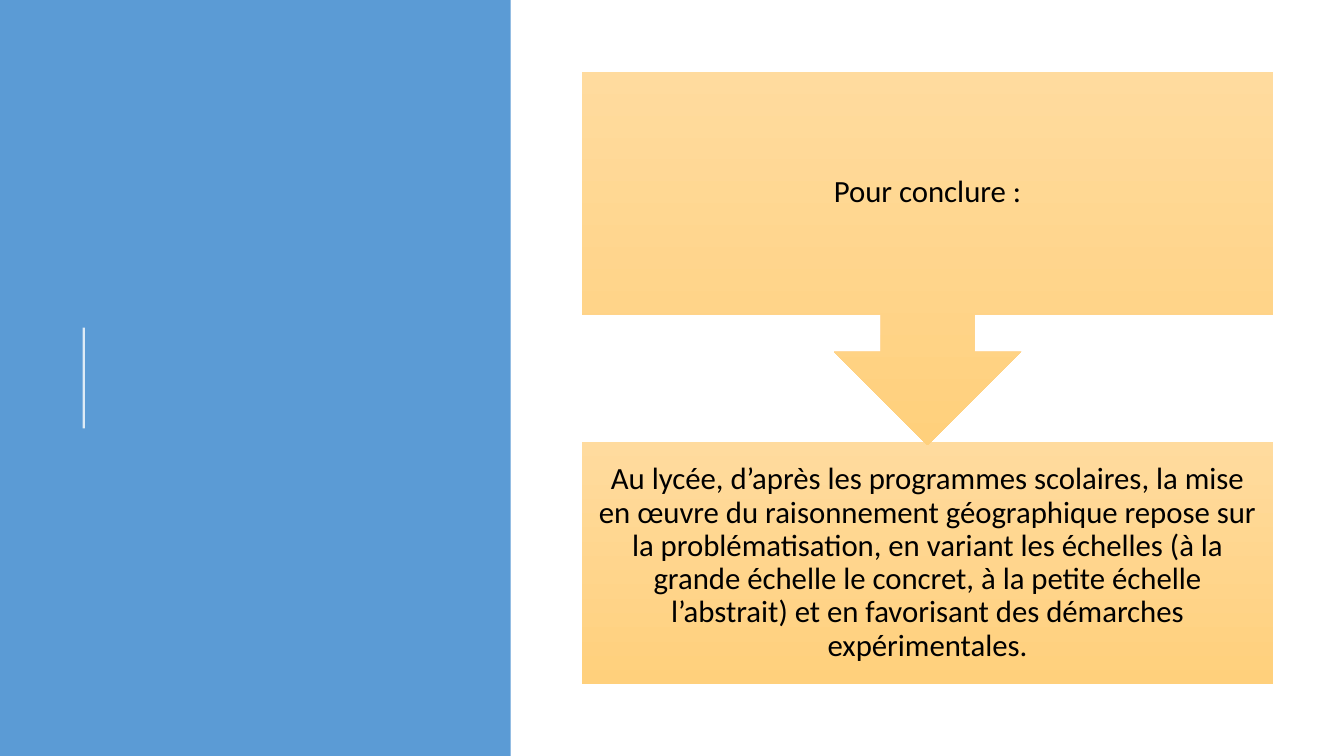
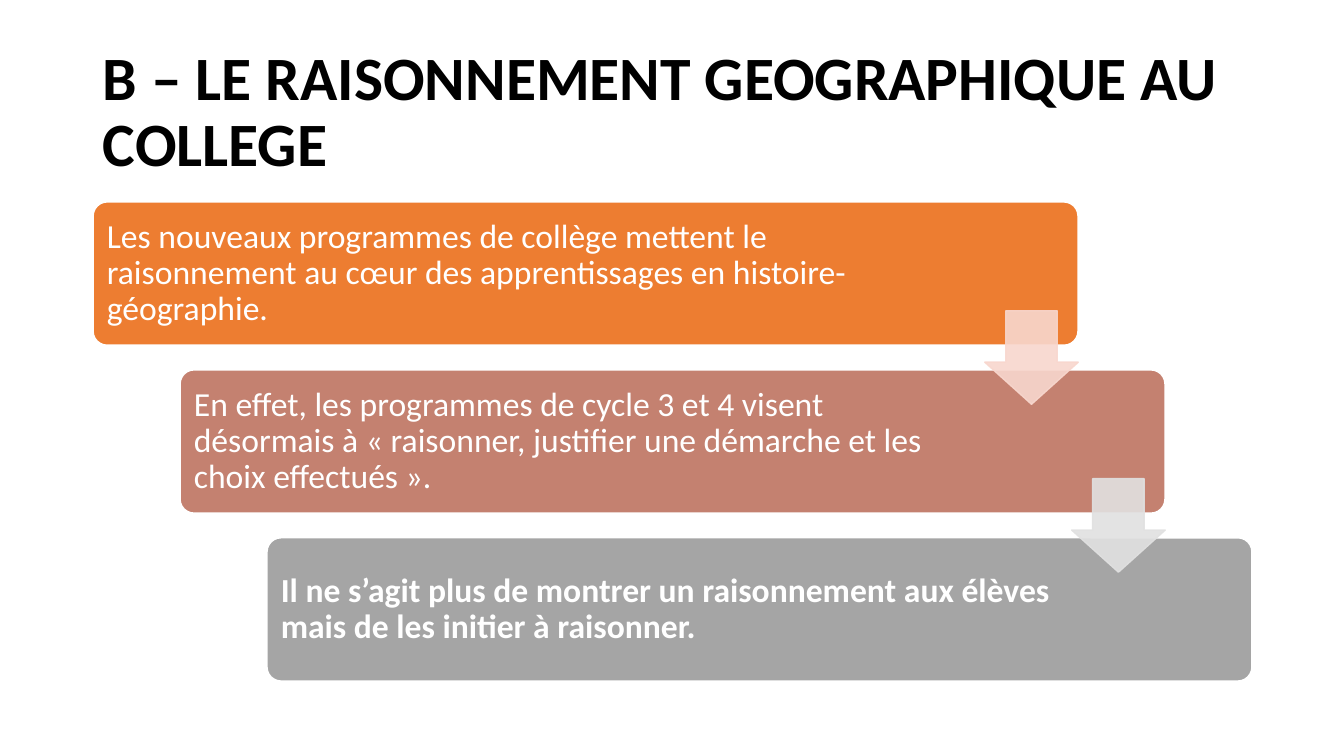
from lxml import etree
from pptx import Presentation
from pptx.dml.color import RGBColor
from pptx.enum.shapes import MSO_CONNECTOR, MSO_SHAPE
from pptx.enum.text import MSO_ANCHOR, MSO_AUTO_SIZE, PP_ALIGN
from pptx.oxml.ns import qn
from pptx.util import Inches, Pt

RECTANGLE = MSO_SHAPE.RECTANGLE
ROUNDED = MSO_SHAPE.ROUNDED_RECTANGLE
DOWN_ARROW = MSO_SHAPE.DOWN_ARROW
DOWN_CALLOUT = MSO_SHAPE.DOWN_ARROW_CALLOUT
STRAIGHT = MSO_CONNECTOR.STRAIGHT
MIDDLE = MSO_ANCHOR.MIDDLE
LEFT, CENTER = PP_ALIGN.LEFT, PP_ALIGN.CENTER
NO_AUTOFIT = MSO_AUTO_SIZE.NONE

WIDTH, HEIGHT = 13.33, 7.5
FONT = "Calibri"
TITLE_ONLY, BLANK = 5, 6
COLORS = {
    "black": "000000",
    "white": "FFFFFF",
    "blue": "5B9BD5",
    "gold_light": "FFDB9E",
    "gold_dark": "FFD07C",
    "orange": "ED7D31",
    "terracotta": "C48170",
    "gray": "A5A5A5",
    "pale_orange": "F8D7CE",
    "pale_gray": "E1E1E1",
}
CONCLUSION = (
    "Pour conclure :",
    "Au lycée, d’après les programmes scolaires, la mise en œuvre du raisonnement "
    "géographique repose sur la problématisation, en variant les échelles (à la grande "
    "échelle le concret, à la petite échelle l’abstrait) et en favorisant des démarches "
    "expérimentales.",
)
COLLEGE_TITLE = "B – LE RAISONNEMENT GEOGRAPHIQUE AU COLLEGE"
COLLEGE_STEPS = (
    ("Les nouveaux programmes de collège mettent le raisonnement au cœur des "
     "apprentissages en histoire-géographie.", "orange", False),
    ("En effet, les programmes de cycle 3 et 4 visent désormais à « raisonner, justifier "
     "une démarche et les choix effectués ».", "terracotta", False),
    ("Il ne s’agit plus de montrer un raisonnement aux élèves mais de les initier à "
     "raisonner.", "gray", True),
)
ARROW_COLORS = ("pale_orange", "pale_gray")


def rgb(name):
    """Return the named palette colour."""
    return RGBColor.from_string(COLORS[name])


def set_opacity(shape, percent):
    """Apply one opacity to the fill and line colours of a shape."""
    for color in shape.element.iter(qn("a:srgbClr")):
        etree.SubElement(color, qn("a:alpha")).set("val", str(percent * 1000))


def add_block(slide, kind, box, fill, line=None, line_width=1.5):
    """Add a flat preset shape; a pair of fill names gives a vertical gradient."""
    shape = slide.shapes.add_shape(kind, *map(Inches, box))
    shape.shadow.inherit = False
    if isinstance(fill, tuple):
        shape.fill.gradient()
        shape.fill.gradient_angle = 270
        for stop, name in zip(shape.fill.gradient_stops, fill):
            stop.color.rgb = rgb(name)
    else:
        shape.fill.solid()
        shape.fill.fore_color.rgb = rgb(fill)
    if line:
        shape.line.color.rgb = rgb(line)
        shape.line.width = Pt(line_width)
    else:
        shape.line.fill.background()
    return shape


def write_text(shape, text, size, color, alignment=LEFT, bold=False, inset=0.1, right=None):
    """Write one vertically centred paragraph into a shape."""
    frame = shape.text_frame
    frame.word_wrap = True
    frame.auto_size = NO_AUTOFIT
    frame.vertical_anchor = MIDDLE
    frame.margin_left = frame.margin_top = frame.margin_bottom = Inches(inset)
    frame.margin_right = Inches(inset if right is None else right)
    paragraph = frame.paragraphs[0]
    paragraph.alignment = alignment
    paragraph.line_spacing = 0.9
    run = paragraph.add_run()
    run.text = text
    run.font.name = FONT
    run.font.size = Pt(size)
    run.font.bold = bold
    run.font.color.rgb = rgb(color)


def add_title(slide, text, box):
    """Place and format the title placeholder."""
    title = slide.shapes.title
    title.left, title.top, title.width, title.height = map(Inches, box)
    write_text(title, text, 44, "black", bold=True)


def add_side_panel(slide, box):
    """Draw the coloured panel with its short vertical rule."""
    left, top, width, height = box
    add_block(slide, RECTANGLE, box, "blue")
    x, middle, half = left + width * 0.164, top + height / 2, height / 15
    rule = slide.shapes.add_connector(
        STRAIGHT, *map(Inches, (x, middle + half, x, middle - half)))
    rule.line.color.rgb = rgb("white")
    rule.line.width = Pt(1.5)
    set_opacity(rule, 80)
    etree.SubElement(rule.element.spPr, qn("a:effectLst"))


def add_conclusion_flow(slide, box, texts):
    """Stack a callout whose arrow points at the box below it."""
    left, top, width, height = box
    callout_height, box_height = height * 0.61, height * 0.396
    parts = (
        (RECTANGLE, top + height - box_height, box_height, texts[1]),
        (DOWN_CALLOUT, top, callout_height, texts[0]),
    )
    for kind, y, part_height, text in parts:
        shape = add_block(slide, kind, (left, y, width, part_height),
                          ("gold_light", "gold_dark"))
        write_text(shape, text, 22, "black", CENTER, inset=0.17)


def add_staircase(slide, box, steps, arrow_colors):
    """Lay cards in descending steps, with an arrow across each gap."""
    left, top, width, height = box
    card_width, card_height = width * 0.85, height * 0.3
    step_x = (width - card_width) / (len(steps) - 1)
    step_y = (height - card_height) / (len(steps) - 1)
    arrow_size = card_height * 0.65
    for index, (text, color, bold) in enumerate(steps):
        card_box = (left + index * step_x, top + index * step_y, card_width, card_height)
        card = add_block(slide, ROUNDED, card_box, color, "white")
        card.adjustments[0] = 0.1
        write_text(card, text, 24, "white", bold=bold, right=1.9)
    for index, color in enumerate(arrow_colors):
        x = left + index * step_x + card_width - arrow_size
        y = top + index * step_y + (step_y + card_height - arrow_size) / 2
        arrow = add_block(slide, DOWN_ARROW, (x, y, arrow_size, arrow_size), color, color, 1)
        arrow.adjustments[0], arrow.adjustments[1] = 0.55, 0.45
        set_opacity(arrow, 90)


def build_conclusion(presentation):
    """Build the concluding slide."""
    slide = presentation.slides.add_slide(presentation.slide_layouts[BLANK])
    add_side_panel(slide, (0, 0, WIDTH * 0.38, HEIGHT))
    add_conclusion_flow(slide, (5.77, 0.71, 6.86, 6.08), CONCLUSION)


def build_college(presentation):
    """Build the titled slide with the three steps."""
    slide = presentation.slides.add_slide(presentation.slide_layouts[TITLE_ONLY])
    add_title(slide, COLLEGE_TITLE, (0.92, 0.4, 11.5, 1.45))
    add_staircase(slide, (0.92, 2, 11.5, 4.76), COLLEGE_STEPS, ARROW_COLORS)


def main():
    """Create and save the presentation."""
    presentation = Presentation()
    presentation.slide_width = Inches(WIDTH)
    presentation.slide_height = Inches(HEIGHT)
    build_conclusion(presentation)
    build_college(presentation)
    presentation.save("out.pptx")


if __name__ == "__main__":
    main()
